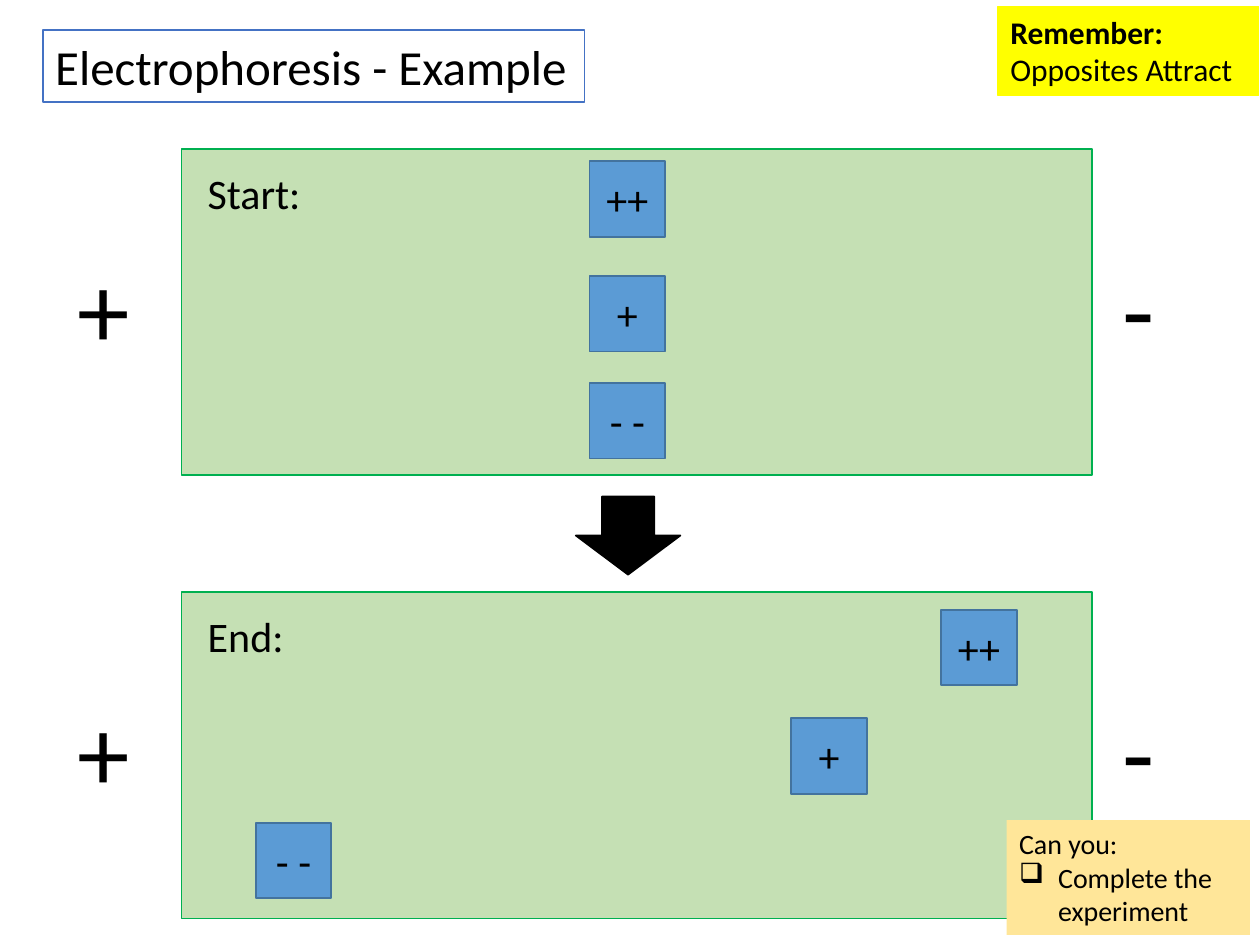
from lxml import etree
from pptx import Presentation
from pptx.dml.color import RGBColor
from pptx.enum.shapes import MSO_SHAPE
from pptx.enum.text import MSO_ANCHOR, MSO_AUTO_SIZE, PP_ALIGN
from pptx.oxml.ns import qn
from pptx.util import Inches, Pt

RECT, DOWN = MSO_SHAPE.RECTANGLE, MSO_SHAPE.DOWN_ARROW
TOP, MID = MSO_ANCHOR.TOP, MSO_ANCHOR.MIDDLE
LEFT, MIDDLE = PP_ALIGN.LEFT, PP_ALIGN.CENTER
GROW, FIXED = MSO_AUTO_SIZE.SHAPE_TO_FIT_TEXT, MSO_AUTO_SIZE.NONE

TITLE = "Electrophoresis - Example"
STAGES = [
    {"top": 1.18, "name": "Start:", "width": 0.94,
     "tiles": [("++", 4.68, 1.28), ("+", 4.68, 2.19), ("- -", 4.68, 3.04)]},
    {"top": 4.7, "name": "End:", "width": 0.81,
     "tiles": [("++", 7.47, 4.84), ("+", 6.28, 5.7), ("- -", 2.03, 6.53)]},
]
POLES = [("+", 0.52, 0.62), ("-", 8.81, 0.46)]
HINT = ["Remember:", "Opposites Attract"]
TASK = ["Can you:", "Complete the experiment"]
TILE = 0.6

deck = Presentation()
deck.slide_width, deck.slide_height = Inches(10), Inches(7.5)
slide = deck.slides.add_slide(deck.slide_layouts[6])


def color(code):
    return RGBColor.from_string(code)


def write(shape, lines, size, wrap=True, fit=GROW, anchor=TOP, align=LEFT):
    frame = shape.text_frame
    frame.text = "\n".join(lines)
    form = {"word_wrap": wrap, "auto_size": fit, "vertical_anchor": anchor}
    for key, value in form.items():
        setattr(frame, key, value)
    for para in frame.paragraphs:
        para.alignment = align
        font = para.runs[0].font
        for key, value in {"size": Pt(size), "name": "Calibri"}.items():
            setattr(font, key, value)
        font.color.rgb = color("000000")
    return frame.paragraphs


def block(box, fill, line=None, width=1, kind=RECT):
    shape = slide.shapes.add_shape(kind, *map(Inches, box))
    shape.shadow.inherit = False
    shape.fill.solid()
    shape.fill.fore_color.rgb = color(fill)
    if line:
        shape.line.color.rgb = color(line)
        shape.line.width = Pt(width)
    else:
        shape.line.fill.background()
    return shape


def label(box, text, size):
    write(slide.shapes.add_textbox(*map(Inches, box)), [text], size, wrap=False)


def bullet(para, mark, indent):
    props = para._p.get_or_add_pPr()
    props.set("marL", str(Inches(indent)))
    props.set("indent", str(-Inches(indent)))
    etree.SubElement(props, qn("a:buChar")).set("char", mark)


write(block((0.34, 0.24, 4.3, 0.57), "FFFFFF", "4472C4"), [TITLE], 28, wrap=False)

for stage in STAGES:
    top = stage["top"]
    block((1.44, top, 7.23, 2.59), "C5E0B4", "00B050")
    for sign, left, width in POLES:
        label((left, top + 0.7, width, 1.11), sign, 60)
    for sign, left, high in stage["tiles"]:
        tile = block((left, high, TILE, TILE), "5B9BD5", "43739E")
        write(tile, [sign], 24, fit=FIXED, anchor=MID, align=MIDDLE)
    label((1.55, top + 0.1, stage["width"], 0.5), stage["name"], 24)

block((4.57, 3.94, 0.83, 0.62), "000000", "000000", kind=DOWN)

hint = write(block((7.92, 0.05, 2.07, 0.71), "FFFF00", "FFFF00", 0.75), HINT, 18)
hint[0].runs[0].font.bold = True

task = write(block((7.99, 6.51, 1.93, 0.91), "FFE699"), TASK, 16)
bullet(task[1], "❑", 0.31)

deck.save("out.pptx")
